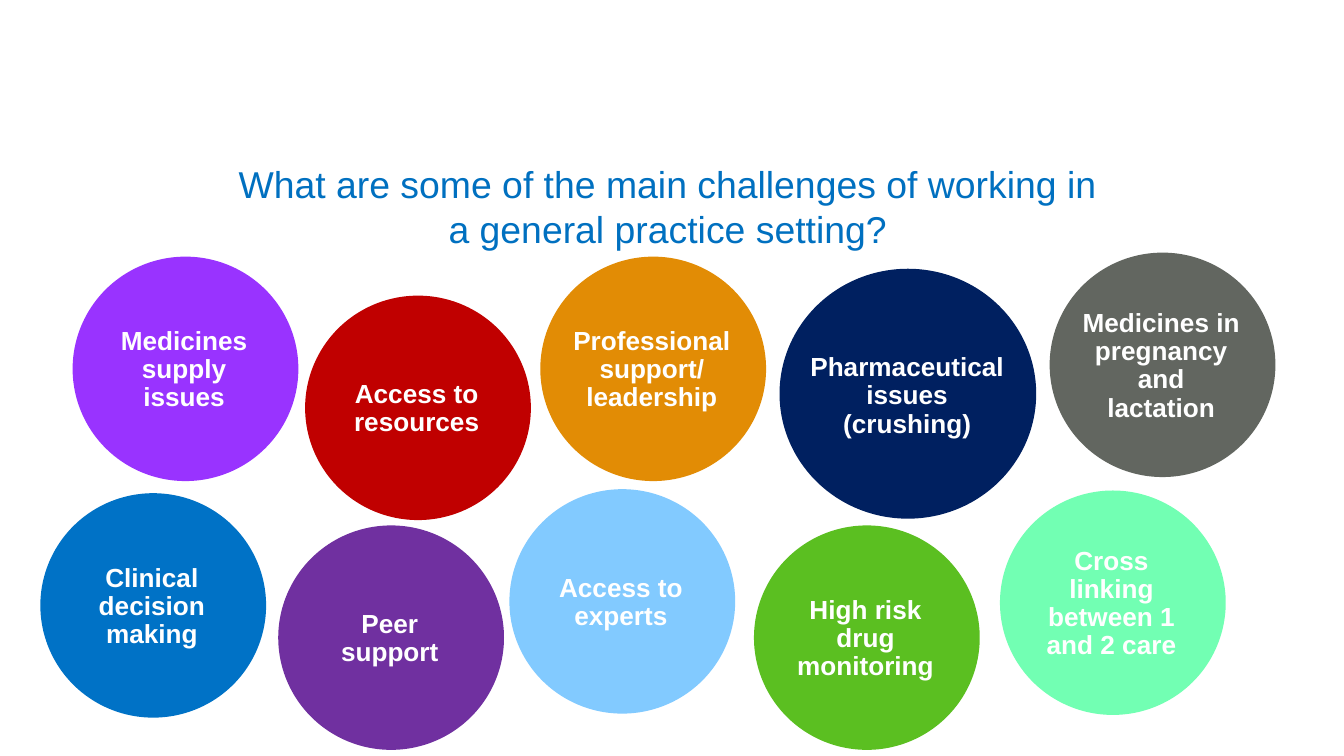
from pptx import Presentation
from pptx.dml.color import RGBColor
from pptx.enum.shapes import MSO_SHAPE
from pptx.enum.text import MSO_ANCHOR, PP_ALIGN
from pptx.util import Inches, Pt

COLORS = {
    "title": "0070C0", "label": "FFFFFF", "orange": "E28C05",
    "purple": "7030A0", "blue": "0072C6", "green": "5BBF21",
    "red": "C00000", "navy": "002060", "violet": "9933FF",
    "sky": "82CAFF", "gray": "626660", "mint": "72FFB3",
}

# Circle width and height, then label offset and size inside it
REGULAR = (1.68, 1.67, 0.22, 0.37, 1.22, 0.95)
LARGE = (1.91, 1.86, 0.2, 0.42, 1.5, 1.06)

CHALLENGES = [
    ("Professional support/ leadership", "orange", 4.02, 1.91, REGULAR),
    ("Peer support", "purple", 2.07, 3.91, REGULAR),
    ("Clinical decision making", "blue", 0.3, 3.67, REGULAR),
    ("High risk drug monitoring", "green", 5.61, 3.91, REGULAR),
    ("Access to resources", "red", 2.27, 2.2, REGULAR),
    ("Pharmaceutical issues (crushing)", "navy", 5.8, 2, LARGE),
    ("Medicines supply issues", "violet", 0.54, 1.91, REGULAR),
    ("Access to experts", "sky", 3.79, 3.64, REGULAR),
    ("Medicines in pregnancy and lactation", "gray", 7.81, 1.88, REGULAR),
    ("Cross linking between 1 and 2 care", "mint", 7.44, 3.65, REGULAR),
]


def add_filled(group, preset, left, top, width, height, color):
    shape = group.shapes.add_shape(
        preset, Inches(left), Inches(top), Inches(width), Inches(height))
    shape.shadow.inherit = False
    shape.fill.solid()
    shape.fill.fore_color.rgb = RGBColor.from_string(COLORS[color])
    shape.line.fill.background()
    return shape


def write_centered(frame, text, size, color, bold=False):
    frame.word_wrap = True
    frame.text = text
    paragraph = frame.paragraphs[0]
    paragraph.alignment = PP_ALIGN.CENTER
    font = paragraph.runs[0].font
    font.name, font.size, font.bold = "Arial", Pt(size), bold
    font.color.rgb = RGBColor.from_string(COLORS[color])
    return paragraph


# Widescreen slide, 16:9
prs = Presentation()
prs.slide_width, prs.slide_height = Inches(10), Inches(10 * 9 / 16)
slide = prs.slides.add_slide(prs.slide_layouts[6])

# Question
question = slide.shapes.add_textbox(
    Inches(1.57), Inches(1.15), Inches(6.8), Inches(0.77))
write_centered(
    question.text_frame,
    "What are some of the main challenges of working in "
    "a general practice setting?", 20, "title")

# Challenge circles, each grouped with its label
for text, color, left, top, layout in CHALLENGES:
    width, height, dx, dy, label_width, label_height = layout
    challenge = slide.shapes.add_group_shape()
    add_filled(challenge, MSO_SHAPE.OVAL, left, top, width, height, color)
    label = add_filled(challenge, MSO_SHAPE.RECTANGLE, left + dx, top + dy,
                       label_width, label_height, color)
    frame = label.text_frame
    frame.vertical_anchor = MSO_ANCHOR.MIDDLE
    frame.margin_left = frame.margin_right = Inches(0.02)
    frame.margin_top = frame.margin_bottom = Inches(0.02)
    paragraph = write_centered(frame, text, 14, "label", bold=True)
    paragraph.line_spacing = 0.9

prs.save("out.pptx")
